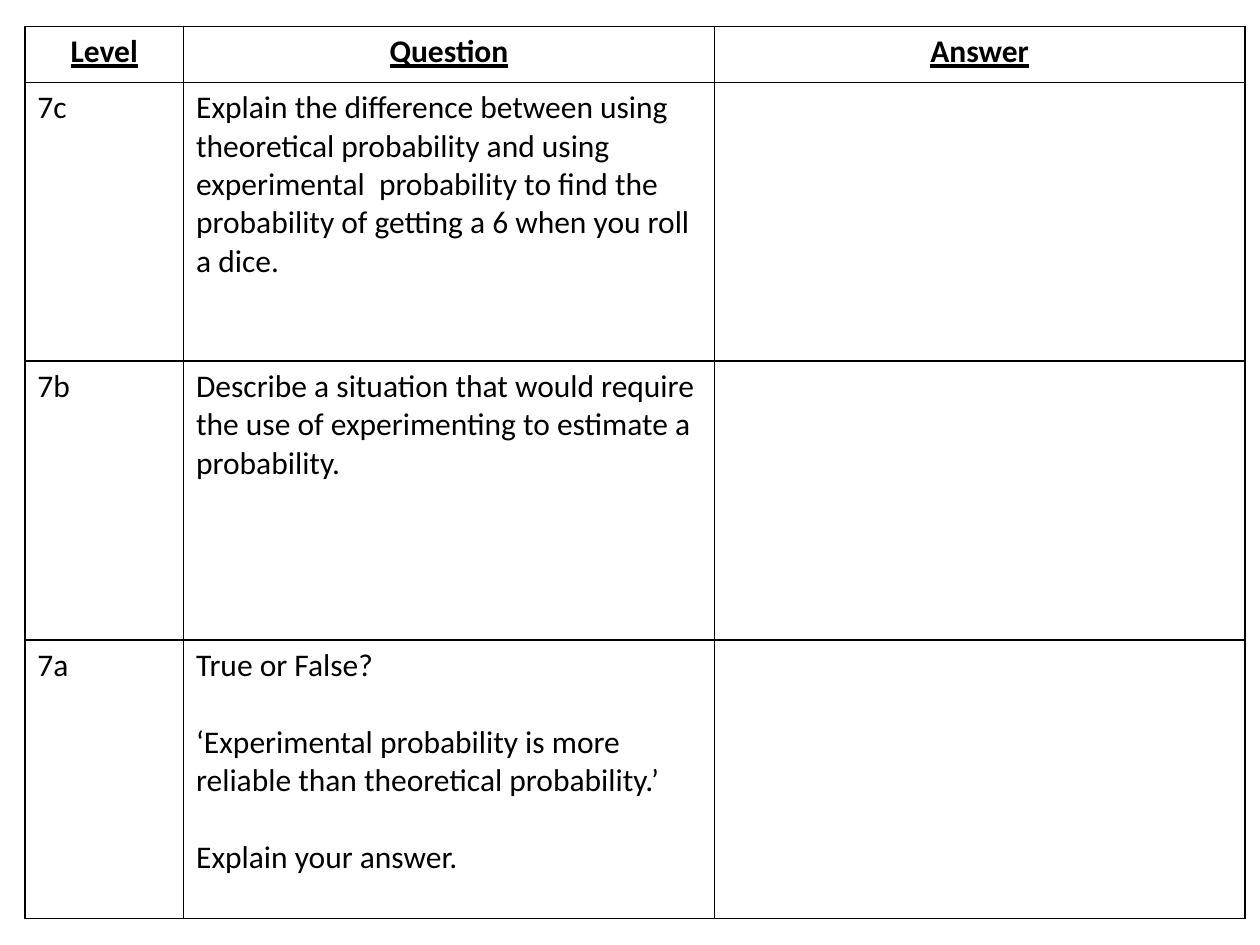
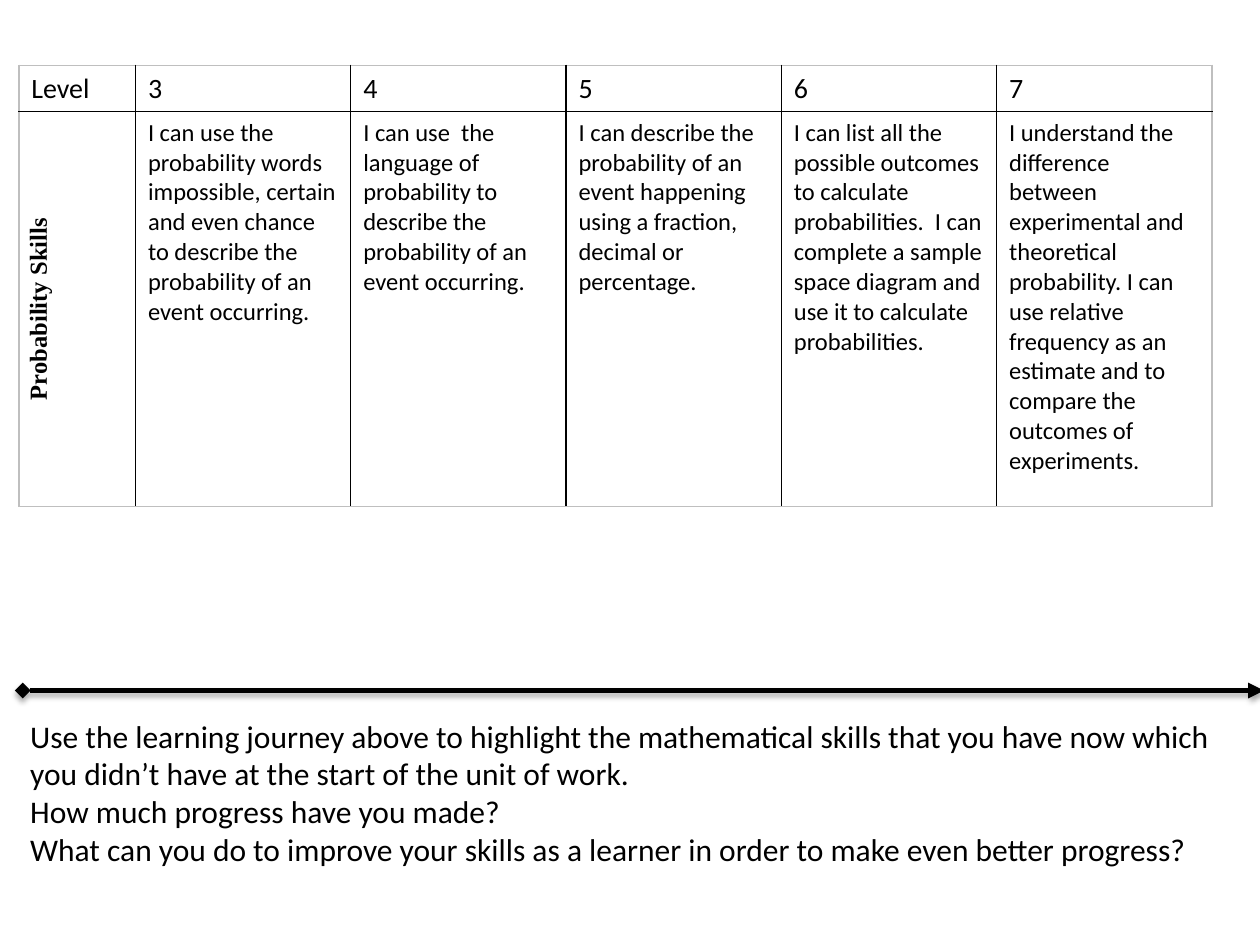
from lxml import etree
from pptx import Presentation
from pptx.dml.color import RGBColor
from pptx.enum.shapes import MSO_CONNECTOR
from pptx.enum.text import MSO_AUTO_SIZE, PP_ALIGN
from pptx.oxml.ns import qn
from pptx.util import Cm, Pt

BLACK = RGBColor(0x00, 0x00, 0x00)
GREY = RGBColor(0xBF, 0xBF, 0xBF)
BODY_FONT = "Calibri"
SIDE_FONT = "Times New Roman"
CENTER = PP_ALIGN.CENTER
STRAIGHT = MSO_CONNECTOR.STRAIGHT
GROW = MSO_AUTO_SIZE.SHAPE_TO_FIT_TEXT

QUESTION_HEADINGS = ["Level", "Question", "Answer"]
QUESTIONS = [
    ("7c", ["Explain the difference between using theoretical probability and using "
            "experimental  probability to find the probability of getting a 6 when you "
            "roll a dice."]),
    ("7b", ["Describe a situation that would require the use of experimenting to "
            "estimate a probability."]),
    ("7a", ["True or False?",
            "‘Experimental probability is more reliable than theoretical probability.’",
            "Explain your answer."]),
]
SKILLS = {
    "3": "I can use the probability words  impossible, certain and even chance to "
         "describe the probability of an event occurring.",
    "4": "I can use  the language of probability to describe the probability of an "
         "event occurring.",
    "5": "I can describe the probability of an event happening using a fraction, "
         "decimal or percentage.",
    "6": "I can list all the possible outcomes to calculate probabilities.  I can "
         "complete a sample space diagram and use it to calculate probabilities.",
    "7": "I understand the difference between experimental and theoretical "
         "probability. I can use relative frequency as an estimate and to compare the "
         "outcomes of experiments.",
}
REFLECTION = [
    "Use the learning journey above to highlight the mathematical skills that you have "
    "now which you didn’t have at the start of the unit of work.",
    "How much progress have you made?",
    "What can you do to improve your skills as a learner in order to make even better "
    "progress?",
]


def write(frame, lines, size, font=BODY_FONT, bold=False, underline=False,
          align=None, gap=0):
    """Put each line in its own paragraph, with gap points between them."""
    for index, line in enumerate(lines):
        para = frame.add_paragraph() if index else frame.paragraphs[0]
        para.alignment = align
        if index and gap:
            para.space_before = Pt(gap)
        span = para.add_run()
        span.text = line
        span.font.name = font
        span.font.size = Pt(size)
        span.font.bold = bold
        span.font.underline = underline
        span.font.color.rgb = BLACK


def set_border(cell, side, color):
    properties = cell._tc.get_or_add_tcPr()
    line = etree.SubElement(properties, qn(f"a:ln{side}"), w=str(Pt(1)))
    fill = etree.SubElement(line, qn("a:solidFill"))
    etree.SubElement(fill, qn("a:srgbClr"), val=str(color))


def add_grid(page, left, top, widths, heights, outer_color):
    """Add an unfilled table with black inner lines and the given outer colour."""
    frame = page.shapes.add_table(len(heights), len(widths), Cm(left), Cm(top),
                                  Cm(sum(widths)), Cm(sum(heights)))
    table = frame.table
    table.first_row = table.horz_banding = False
    for column, width in zip(table.columns, widths):
        column.width = Cm(width)
    for row, height in zip(table.rows, heights):
        row.height = Cm(height)
    last_row, last_column = len(heights) - 1, len(widths) - 1
    for r in range(len(heights)):
        for c in range(len(widths)):
            cell = table.cell(r, c)
            outer = {"L": c == 0, "R": c == last_column,
                     "T": r == 0, "B": r == last_row}
            for side, is_outer in outer.items():
                set_border(cell, side, outer_color if is_outer else BLACK)
            cell.fill.background()
    return table


def add_journey_arrow(page, left, right, y):
    arrow = page.shapes.add_connector(STRAIGHT, Cm(left), Cm(y), Cm(right), Cm(y))
    arrow.line.color.rgb = BLACK
    arrow.line.width = Pt(3)
    line = arrow.line._get_or_add_ln()
    etree.SubElement(line, qn("a:headEnd"), type="diamond")
    etree.SubElement(line, qn("a:tailEnd"), type="triangle")
    effects = etree.SubElement(arrow._element.spPr, qn("a:effectLst"))
    shadow = etree.SubElement(effects, qn("a:outerShdw"), blurRad=str(Pt(3.1)),
                              dist=str(Pt(1.8)), dir="5400000", rotWithShape="0")
    color = etree.SubElement(shadow, qn("a:srgbClr"), val=str(BLACK))
    etree.SubElement(color, qn("a:alpha"), val="35000")


def add_text(page, left, top, width, height, lines, size):
    box = page.shapes.add_textbox(Cm(left), Cm(top), Cm(width), Cm(height))
    box.text_frame.word_wrap = True
    box.text_frame.auto_size = GROW
    write(box.text_frame, lines, size)


def build_questions(page):
    table = add_grid(page, 0.5, 0.53, [3.2, 10.7, 10.7],
                     [1.13] + [5.62] * len(QUESTIONS), BLACK)
    for column, heading in enumerate(QUESTION_HEADINGS):
        write(table.cell(0, column).text_frame, [heading], 18, bold=True,
              underline=True, align=CENTER)
    for row, (level, question) in enumerate(QUESTIONS, start=1):
        write(table.cell(row, 0).text_frame, [level], 18)
        write(table.cell(row, 1).text_frame, question, 18, gap=22)


def build_learning_journey(page):
    add_journey_arrow(page, 0.46, 25.48, 13.92)
    add_text(page, 0.36, 14.32, 24.8, 4.11, REFLECTION, 18)
    table = add_grid(page, 0.38, 1.32, [2.35] + [4.34] * len(SKILLS),
                     [0.93, 7.96], GREY)
    write(table.cell(0, 0).text_frame, ["Level"], 16)
    side = table.cell(1, 0)
    side._tc.get_or_add_tcPr().set("vert", "vert270")
    write(side.text_frame, ["Probability Skills"], 14, font=SIDE_FONT, bold=True,
          align=CENTER)
    for column, (level, skill) in enumerate(SKILLS.items(), start=1):
        write(table.cell(0, column).text_frame, [level], 16)
        write(table.cell(1, column).text_frame, [skill], 14)


def main():
    deck = Presentation()
    deck.slide_width, deck.slide_height = Cm(25.4), Cm(19.05)
    blank = deck.slide_layouts[6]
    for build in (build_questions, build_learning_journey):
        build(deck.slides.add_slide(blank))
    deck.save("out.pptx")


if __name__ == "__main__":
    main()
